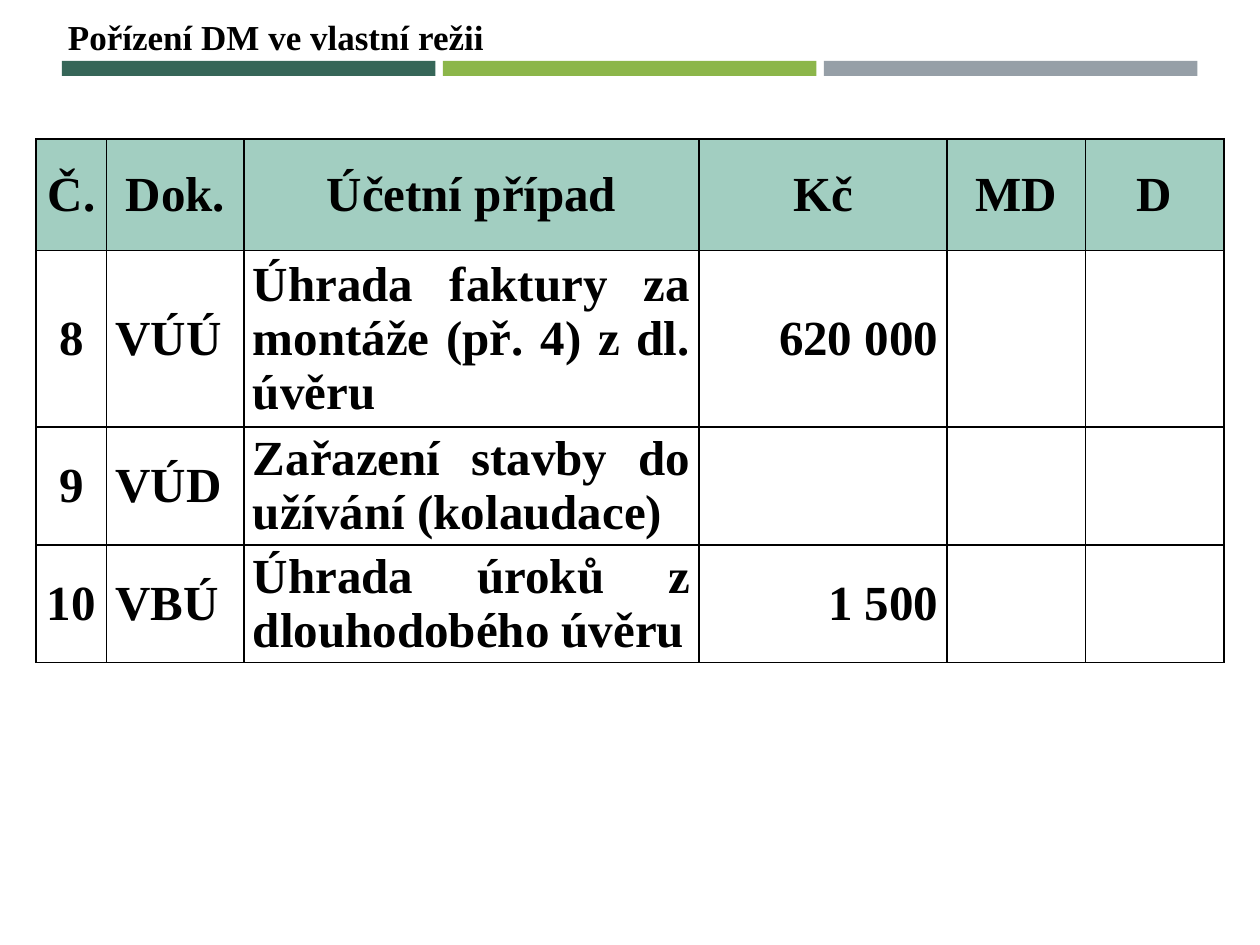
from lxml.etree import SubElement
from pptx import Presentation
from pptx.dml.color import RGBColor
from pptx.enum.shapes import MSO_SHAPE
from pptx.enum.text import MSO_ANCHOR, MSO_AUTO_SIZE, PP_ALIGN
from pptx.oxml.ns import qn
from pptx.util import Cm, Pt

COLORS = {
    "text": "000000",
    "border": "000000",
    "header": "A2CEC1",
    "dark green": "366658",
    "light green": "8CB64A",
    "grey": "969FA7",
}
FONT = "Times New Roman"
COLUMN_WIDTHS = [1.42, 2.77, 9.17, 5, 2.79, 2.79]
ROW_HEIGHTS = [2.25, 3.56, 2.36, 2.36]
ROWS = [
    ["Č.", "Dok.", "Účetní případ", "Kč", "MD", "D"],
    ["8", "VÚÚ", "Úhrada faktury za montáže (př. 4) z dl. úvěru", "620 000", "", ""],
    ["9", "VÚD", "Zařazení stavby do užívání (kolaudace)", "", "", ""],
    ["10", "VBÚ", "Úhrada úroků z dlouhodobého úvěru", "1 500", "", ""],
]
BODY_ALIGNMENTS = [PP_ALIGN.CENTER, PP_ALIGN.LEFT, PP_ALIGN.JUSTIFY,
                   PP_ALIGN.RIGHT, PP_ALIGN.CENTER, PP_ALIGN.CENTER]


def color(name):
    return RGBColor.from_string(COLORS[name])


def add_span(para, text, size):
    span = para.add_run()
    span.text = text
    span.font.name = FONT
    span.font.size = Pt(size)
    span.font.bold = True
    span.font.color.rgb = color("text")


def add_title(slide, text):
    box = slide.shapes.add_textbox(Cm(1.12), Cm(0.18), Cm(8.97), Cm(1.11))
    frame = box.text_frame
    frame.word_wrap = False
    frame.auto_size = MSO_AUTO_SIZE.SHAPE_TO_FIT_TEXT
    add_span(frame.paragraphs[0], text, 20)


def add_bars(slide):
    for index, name in enumerate(["dark green", "light green", "grey"]):
        bar = slide.shapes.add_shape(
            MSO_SHAPE.RECTANGLE, Cm(1.25 + 7.68 * index), Cm(1.23), Cm(7.53), Cm(0.3))
        bar.shadow.inherit = False
        bar.fill.solid()
        bar.fill.fore_color.rgb = color(name)
        bar.line.fill.background()


def set_borders(cell):
    """Draw a 1 pt line on each side; must run before the cell is filled."""
    properties = cell._tc.get_or_add_tcPr()
    for side in ("a:lnL", "a:lnR", "a:lnT", "a:lnB"):
        line = SubElement(properties, qn(side), w=str(Pt(1)))
        fill = SubElement(line, qn("a:solidFill"))
        SubElement(fill, qn("a:srgbClr"), val=COLORS["border"])


def fill_cell(cell, text, alignment, is_header):
    set_borders(cell)
    if is_header:
        cell.fill.solid()
        cell.fill.fore_color.rgb = color("header")
    else:
        cell.fill.background()
    cell.vertical_anchor = MSO_ANCHOR.MIDDLE
    cell.margin_left = cell.margin_right = Cm(0.18)
    cell.margin_top = cell.margin_bottom = 0
    para = cell.text_frame.paragraphs[0]
    para.alignment = alignment
    if text:
        add_span(para, text, 28)


def add_entries_table(slide):
    table = slide.shapes.add_table(
        len(ROWS), len(COLUMN_WIDTHS), Cm(0.73), Cm(2.8),
        Cm(sum(COLUMN_WIDTHS)), Cm(sum(ROW_HEIGHTS))).table
    for column, width in zip(table.columns, COLUMN_WIDTHS):
        column.width = Cm(width)
    for row_index, (row, height) in enumerate(zip(table.rows, ROW_HEIGHTS)):
        row.height = Cm(height)
        is_header = row_index == 0
        for cell, text, alignment in zip(row.cells, ROWS[row_index], BODY_ALIGNMENTS):
            fill_cell(cell, text, PP_ALIGN.CENTER if is_header else alignment, is_header)


def main():
    deck = Presentation()
    deck.slide_width = Cm(25.4)
    deck.slide_height = Cm(19.05)
    slide = deck.slides.add_slide(deck.slide_layouts[6])
    add_bars(slide)
    add_title(slide, "Pořízení DM ve vlastní režii")
    add_entries_table(slide)
    deck.save("out.pptx")


if __name__ == "__main__":
    main()
